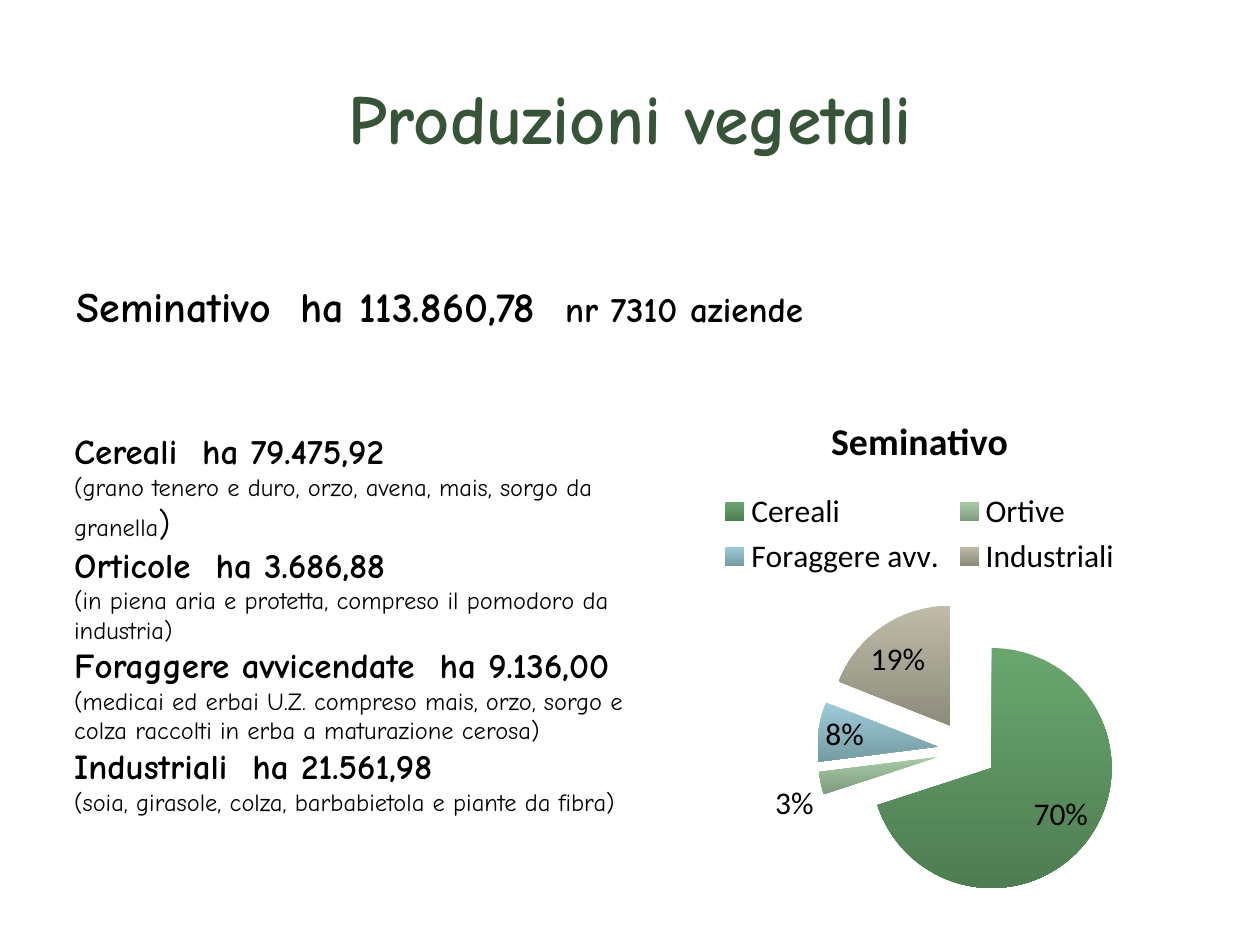
from pptx import Presentation
from pptx.chart.data import CategoryChartData
from pptx.dml.color import RGBColor
from pptx.enum.chart import XL_CHART_TYPE, XL_LABEL_POSITION, XL_LEGEND_POSITION
from pptx.enum.text import MSO_ANCHOR, PP_ALIGN
from pptx.oxml import parse_xml
from pptx.oxml.ns import nsdecls
from pptx.util import Pt

FONT, CHART_FONT = "Comic Neue", "Calibri"
COLORS = {"title": "375439", "text": "000000"}

# A run is (text, size, bold); a paragraph is a list of runs.
TITLE = [[("Produzioni vegetali", 40, True)]]
TOTAL = [[("Seminativo  ha 113.860,78  ", 24, True), ("nr 7310 aziende", 20, True)]]
CROPS = [
    ("Cereali  ha 79.475,92",
     ["(grano tenero e duro, orzo, avena, mais, sorgo da", "granella"], ")"),
    ("Orticole  ha 3.686,88",
     ["(in piena aria e protetta, compreso il pomodoro da", "industria)"], ""),
    ("Foraggere avvicendate  ha 9.136,00",
     ["(medicai ed erbai U.Z. compreso mais, orzo, sorgo e",
      "colza raccolti in erba a maturazione cerosa)"], ""),
    ("Industriali  ha 21.561,98",
     ["(soia, girasole, colza, barbabietola e piante da fibra)"], ""),
]
# category, percent, gradient top, gradient bottom
SHARES = [
    ("Cereali", 70, "69A66E", "4F7D53"),
    ("Ortive", 3, "A8CBA8", "7F9A7F"),
    ("Foraggere avv.", 8, "9ECCD8", "769BA4"),
    ("Industriali", 19, "BEBBA8", "8D8B7C"),
]
PLOT = {"x": 0.16, "y": 0.38, "w": 0.82, "h": 0.54}


def rgb(name):
    return RGBColor.from_string(COLORS.get(name, name))


def add_text(slide, box, paragraphs, color="text", wrap=True):
    tf = slide.shapes.add_textbox(*map(Pt, box)).text_frame
    tf.word_wrap = wrap
    for i, runs in enumerate(paragraphs):
        p = tf.add_paragraph() if i else tf.paragraphs[0]
        for text, size, bold in runs:
            r = p.add_run()
            r.text = text
            r.font.name, r.font.size, r.font.bold = FONT, Pt(size), bold
            r.font.color.rgb = rgb(color)
    return tf


def crop_paragraphs():
    """Bold heading, then light detail lines; the tail closes the last one."""
    paragraphs = []
    for heading, details, tail in CROPS:
        paragraphs.append([(heading, 20, True)])
        paragraphs += [[(line, 14, False)] for line in details]
        if tail:
            paragraphs[-1].append((tail, 20, False))
    return paragraphs


def set_font(font, size, bold=False):
    font.name, font.size, font.bold = CHART_FONT, Pt(size), bold
    font.color.rgb = rgb("text")


def add_pie(slide, box):
    data = CategoryChartData()
    data.categories = [share[0] for share in SHARES]
    data.add_series("Seminativo", [share[1] for share in SHARES])
    chart = slide.shapes.add_chart(XL_CHART_TYPE.PIE, *map(Pt, box), data).chart
    set_font(chart.font, 18)

    chart.has_title = True
    tf = chart.chart_title.text_frame
    tf.text = "Seminativo"
    set_font(tf.paragraphs[0].runs[0].font, 21.6, True)

    chart.has_legend = True
    chart.legend.position = XL_LEGEND_POSITION.TOP
    chart.legend.include_in_layout = False
    set_font(chart.legend.font, 18)

    plot = chart.plots[0]
    plot.vary_by_categories = True
    plot.has_data_labels = True
    labels = plot.data_labels
    labels.show_percentage, labels.show_value = True, False
    labels.number_format, labels.number_format_is_linked = "0%", False
    labels.position = XL_LABEL_POSITION.BEST_FIT
    set_font(labels.font, 18)

    series = plot.series[0]
    for i, (_, _, top, bottom) in enumerate(SHARES):
        fill = series.points[i].format.fill
        fill.gradient()
        fill.gradient_angle = 270
        for stop, color in zip(fill.gradient_stops, (top, bottom)):
            stop.color.rgb = rgb(color)
    first_point = series._element.find("{*}dPt")
    first_point.addprevious(parse_xml(f'<c:explosion {nsdecls("c")} val="25"/>'))

    plot_area = chart._chartSpace.chart.plotArea
    for old in plot_area.findall("{*}layout"):
        plot_area.remove(old)
    modes = '<c:xMode val="edge"/><c:yMode val="edge"/>'
    sizes = "".join(f'<c:{k} val="{v}"/>' for k, v in PLOT.items())
    plot_area.insert(0, parse_xml(
        f'<c:layout {nsdecls("c")}><c:manualLayout><c:layoutTarget val="inner"/>'
        f'{modes}{sizes}</c:manualLayout></c:layout>'))


def main():
    prs = Presentation()
    prs.slide_width, prs.slide_height = Pt(720), Pt(540)
    s = prs.slides.add_slide(prs.slide_layouts[6])

    tf = add_text(s, (36, 21.6, 648, 90), TITLE, "title")
    tf.vertical_anchor = MSO_ANCHOR.MIDDLE
    tf.paragraphs[0].alignment = PP_ALIGN.CENTER

    tf = add_text(s, (36.7, 157, 641, 51), TOTAL)
    tf.paragraphs[0].space_before = Pt(4.8)

    add_text(s, (35.3, 242, 373.7, 271.4), crop_paragraphs(), wrap=False)
    add_pie(s, (331.2, 222.5, 388.8, 317.5))
    prs.save("out.pptx")


if __name__ == "__main__":
    main()
